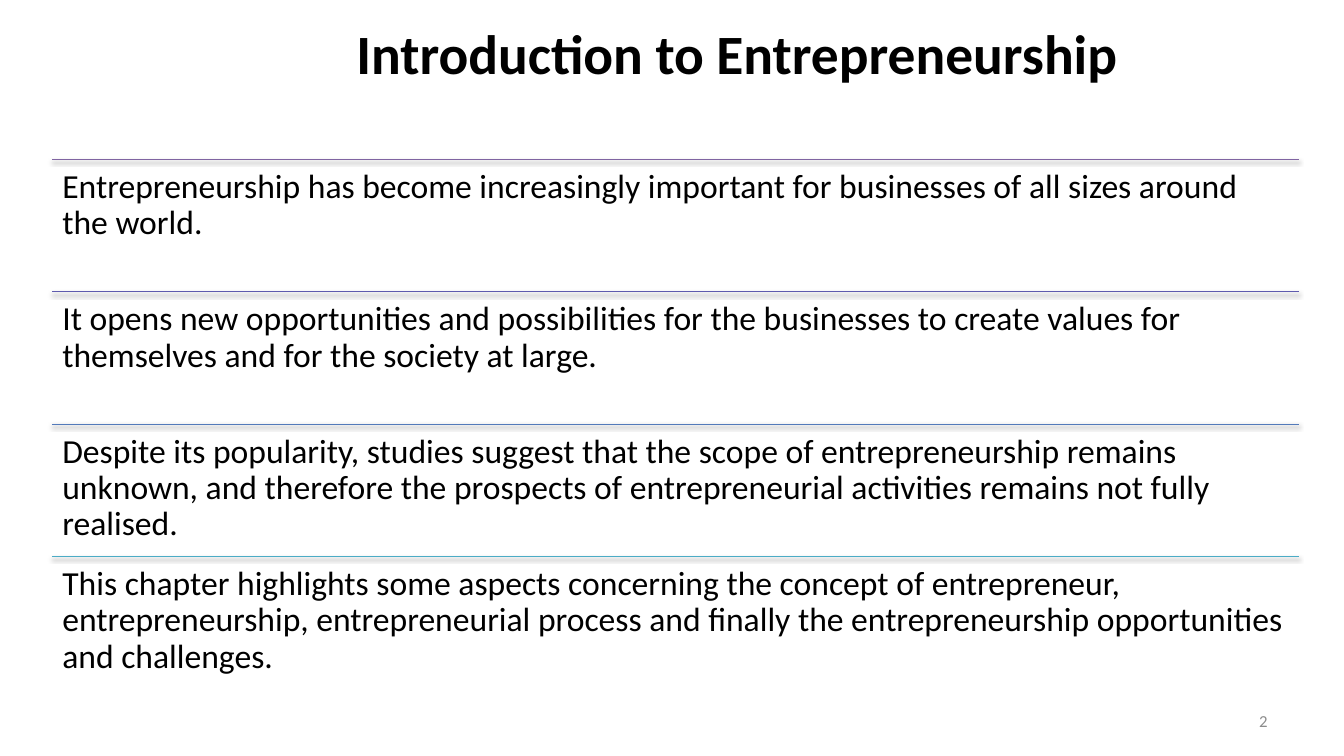
from typing import NamedTuple

from lxml.etree import SubElement
from pptx import Presentation
from pptx.dml.color import RGBColor
from pptx.enum.shapes import MSO_CONNECTOR
from pptx.enum.text import MSO_ANCHOR, PP_ALIGN
from pptx.oxml.ns import qn
from pptx.util import Emu, Inches, Pt

SLIDE_WIDTH, SLIDE_HEIGHT = Inches(13.33), Inches(7.5)
FONT = "Calibri"

# Percentages of the slide's width and height
STATEMENT_LEFT, STATEMENT_WIDTH = 3.9, 92.75
FIRST_ROW_TOP, ROW_HEIGHT = 21.1, 17.5


class Area(NamedTuple):
    """A rectangle in percentages of the slide's size."""
    left: float
    top: float
    width: float
    height: float


class Statement(NamedTuple):
    wording: str
    rule_color: str


TITLE_AREA = Area(16.35, 1.47, 74.42, 10.8)
PAGE_NUMBER_AREA = Area(71.72, 92.67, 23.33, 5.33)

STATEMENTS = [
    Statement("Entrepreneurship has become increasingly important for businesses "
              "of all sizes around the world.", "8064A2"),
    Statement("It opens new opportunities and possibilities for the businesses to "
              "create values for themselves and for the society at large.", "5F5BAE"),
    Statement("Despite its popularity, studies suggest that the scope of "
              "entrepreneurship remains unknown, and therefore the prospects of "
              "entrepreneurial activities remains not fully realised.", "537ABA"),
    Statement("This chapter highlights some aspects concerning the concept of "
              "entrepreneur, entrepreneurship, entrepreneurial process and finally "
              "the entrepreneurship opportunities and challenges.", "4BACC6"),
]


def across(percent: float) -> Emu:
    return Emu(round(SLIDE_WIDTH * percent / 100))


def down(percent: float) -> Emu:
    return Emu(round(SLIDE_HEIGHT * percent / 100))


def rgb(color: str) -> RGBColor:
    return RGBColor.from_string(color)


def add_text(slide, area: Area, wording: str, *, size: float,
             color: str = "000000", bold: bool = False,
             align=PP_ALIGN.LEFT, anchor=MSO_ANCHOR.TOP,
             left_inset: float = 0.1, top_inset: float = 0.05,
             line_spacing: float = 1.0) -> None:
    box = slide.shapes.add_textbox(across(area.left), down(area.top),
                                   across(area.width), down(area.height))
    frame = box.text_frame
    frame.word_wrap = True
    frame.vertical_anchor = anchor
    frame.margin_left, frame.margin_right = Inches(left_inset), Inches(0.1)
    frame.margin_top = frame.margin_bottom = Inches(top_inset)
    paragraph = frame.paragraphs[0]
    paragraph.alignment = align
    paragraph.line_spacing = line_spacing
    run = paragraph.add_run()
    run.text = wording
    run.font.name = FONT
    run.font.size = Pt(size)
    run.font.bold = bold
    run.font.color.rgb = rgb(color)


def add_soft_shadow(connector) -> None:
    effects = SubElement(connector._element.spPr, qn("a:effectLst"))
    shadow = SubElement(effects, qn("a:outerShdw"), blurRad=str(Pt(3.1)),
                        dist=str(Pt(1.8)), dir="5400000", rotWithShape="0")
    tint = SubElement(shadow, qn("a:srgbClr"), val="000000")
    SubElement(tint, qn("a:alpha"), val="35000")


def add_rule(slide, area: Area, color: str) -> None:
    """Draw a shadowed line along the top of the area."""
    top = down(area.top)
    rule = slide.shapes.add_connector(MSO_CONNECTOR.STRAIGHT, across(area.left), top,
                                      across(area.left + area.width), top)
    rule.line.color.rgb = rgb(color)
    rule.line.width = Pt(0.75)
    add_soft_shadow(rule)


def main() -> None:
    deck = Presentation()
    deck.slide_width, deck.slide_height = SLIDE_WIDTH, SLIDE_HEIGHT
    slide = deck.slides.add_slide(deck.slide_layouts[6])

    add_text(slide, TITLE_AREA, "Introduction to Entrepreneurship", size=39.6,
             bold=True, align=PP_ALIGN.CENTER, anchor=MSO_ANCHOR.MIDDLE,
             left_inset=0.44)
    for row, statement in enumerate(STATEMENTS):
        area = Area(STATEMENT_LEFT, FIRST_ROW_TOP + row * ROW_HEIGHT,
                    STATEMENT_WIDTH, ROW_HEIGHT)
        add_rule(slide, area, statement.rule_color)
        add_text(slide, area, statement.wording, size=24, top_inset=0.1,
                 line_spacing=0.9)
    add_text(slide, PAGE_NUMBER_AREA, "2", size=12, color="8C8C8C",
             align=PP_ALIGN.RIGHT, anchor=MSO_ANCHOR.MIDDLE)

    deck.save("out.pptx")


if __name__ == "__main__":
    main()
